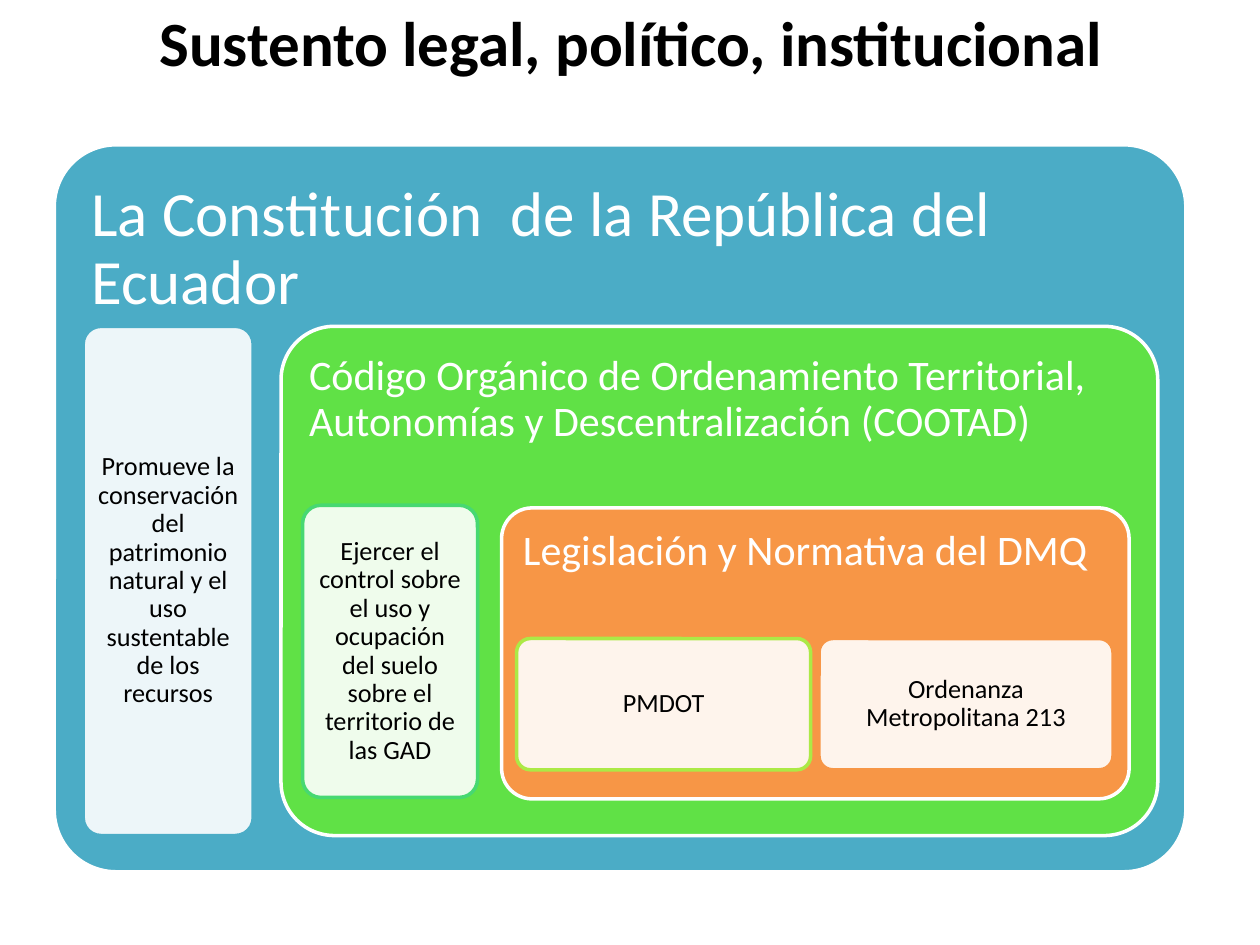
from lxml import etree
from pptx import Presentation
from pptx.dml.color import RGBColor
from pptx.enum.shapes import MSO_SHAPE
from pptx.enum.text import MSO_ANCHOR, PP_ALIGN
from pptx.oxml.ns import qn
from pptx.util import Pt

ROUND = MSO_SHAPE.ROUNDED_RECTANGLE
TOP, MIDDLE = MSO_ANCHOR.TOP, MSO_ANCHOR.MIDDLE
LEFT, CENTER = PP_ALIGN.LEFT, PP_ALIGN.CENTER
WHITE, BLACK = "FFFFFF", "000000"
TEAL, GREEN, ORANGE = "4BACC6", "60E146", "F79646"
MINT, LIME = "47D872", "ACE946"


def paint(target, color):
    """Set a colour format from a hex string."""
    target.rgb = RGBColor.from_string(color)


def inner(box, left, top, width, height):
    """Return a box placed relative to the corner of another."""
    return box[0] + left, box[1] + top, width, height


def write(shape, text, size, color, inset, anchor, align, bold=False):
    """Fill a shape with one formatted paragraph."""
    frame = shape.text_frame
    sides = ("left", "top", "right", "bottom")
    look = {f"margin_{side}": Pt(inset) for side in sides}
    look.update(word_wrap=True, vertical_anchor=anchor)
    for name, value in look.items():
        setattr(frame, name, value)
    para = frame.paragraphs[0]
    para.alignment = align
    para.line_spacing = 0.9
    run = para.add_run()
    run.text = text
    for name, value in {"name": "Calibri", "size": Pt(size), "bold": bold}.items():
        setattr(run.font, name, value)
    paint(run.font.color, color)


def block(slide, box, fill, line, adjust):
    """Add a rounded block with a two-point outline."""
    shape = slide.shapes.add_shape(ROUND, *map(Pt, box))
    shape.adjustments[0] = adjust
    shape.shadow.inherit = False
    shape.fill.solid()
    paint(shape.fill.fore_color, fill)
    paint(shape.line.color, line)
    shape.line.width = Pt(2)
    return shape


def panel(slide, box, text, size, fill, inset=7.2, adjust=0.105):
    """Add a coloured panel with its heading at the top."""
    shape = block(slide, box, fill, WHITE, adjust)
    write(shape, text, size, WHITE, inset, TOP, LEFT)


def card(slide, box, text, line):
    """Add a translucent white card with centred text."""
    shape = block(slide, box, WHITE, line, 0.105)
    tint = shape.fill._xPr.find(qn("a:solidFill"))[0]
    etree.SubElement(tint, qn("a:alpha"), val="90000")
    write(shape, text, 15, BLACK, 4.5, MIDDLE, CENTER)


def title(slide, box):
    """Add the slide title."""
    shape = slide.shapes.add_textbox(*map(Pt, box))
    write(shape, "Sustento legal, político, institucional", 36, BLACK,
          3.6, MIDDLE, CENTER, True)


def local(slide, box):
    """Add the district rules with two cards side by side."""
    panel(slide, box, "Legislación y Normativa del DMQ", 24, ORANGE)
    cards = (("PMDOT", LIME), ("Ordenanza Metropolitana 213", ORANGE))
    for index, (text, line) in enumerate(cards):
        card(slide, inner(box, 8.6 + 172.8 * index, 74.7, 168, 75), text, line)


def code(slide, box):
    """Add the territorial code with its card and the district rules."""
    panel(slide, box, "Código Orgánico de Ordenamiento Territorial, "
          "Autonomías y Descentralización (COOTAD)", 24, GREEN)
    card(slide, inner(box, 12.3, 102.2, 100, 167),
         "Ejercer el control sobre el uso y ocupación del suelo sobre "
         "el territorio de las GAD", MINT)
    local(slide, inner(box, 126, 103.7, 358.6, 166.3))


def nation(slide, box):
    """Add the constitution with its card and the territorial code."""
    panel(slide, box, "La Constitución  de la República del Ecuador",
          36, TEAL, 10.8, 0.085)
    card(slide, inner(box, 16.5, 103.7, 97.2, 291),
         "Promueve la conservación del patrimonio natural y el uso "
         "sustentable de los recursos", TEAL)
    code(slide, inner(box, 129.6, 103.7, 501, 291))


def main():
    """Build and save the slide."""
    deck = Presentation()
    deck.slide_width, deck.slide_height = Pt(720), Pt(540)
    slide = deck.slides.add_slide(deck.slide_layouts[6])
    title(slide, (36.7, 9.4, 648, 33.8))
    nation(slide, (31, 82.8, 646.6, 415.4))
    deck.save("out.pptx")


if __name__ == "__main__":
    main()
